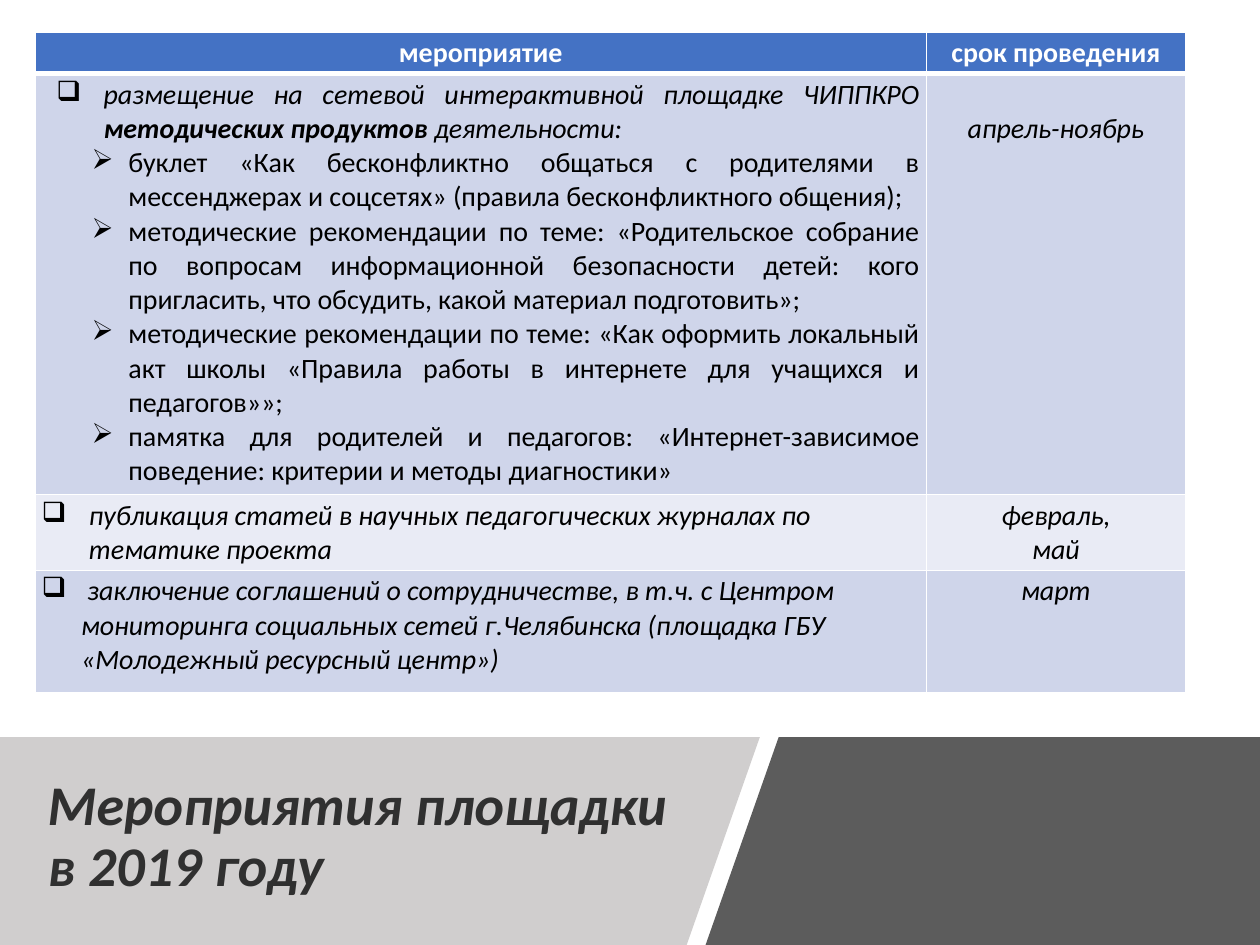
import pptx
import pptx.util
import pptx.dml.color
import pptx.enum.text
import pptx.oxml.ns
from lxml import etree

Pt = pptx.util.Pt
ALIGN = pptx.enum.text.PP_ALIGN
FONT = "Calibri"
COLORS = {
    "white": "FFFFFF", "black": "000000", "header": "4472C4",
    "band_dark": "CFD5EA", "band_light": "E9EBF5",
    "title": "303030", "title_panel": "D0CECE", "side_panel": "404040",
}


def rgb(name):
    return pptx.dml.color.RGBColor.from_string(COLORS[name])


def add_element(parent, tag, **attributes):
    return etree.SubElement(parent, pptx.oxml.ns.qn(tag), attributes)


def add_run(paragraph, text, size, color, bold=False, italic=False):
    run = paragraph.add_run()
    run.text = text
    font = run.font
    font.name, font.size, font.bold, font.italic = FONT, Pt(size), bold, italic
    font.color.rgb = rgb(color)


def set_bullet(paragraph, mark, left, hanging):
    properties = paragraph._p.get_or_add_pPr()
    properties.set("marL", str(Pt(left)))
    properties.set("indent", str(-Pt(hanging)))
    add_element(properties, "a:buChar", char=mark)


def set_borders(cell, bottom):
    properties = cell._tc.get_or_add_tcPr()
    for side, width in (("L", 1), ("R", 1), ("T", 1), ("B", bottom)):
        line = add_element(properties, f"a:ln{side}", w=str(Pt(width)))
        fill = add_element(line, "a:solidFill")
        add_element(fill, "a:srgbClr", val=COLORS["white"])


def fill_cell(cell, paragraphs, fill, color="black", top=2.2, bottom_line=1):
    """Each paragraph is (alignment, bullet or None, runs of (text, bold, italic))."""
    set_borders(cell, bottom_line)
    cell.fill.solid()
    cell.fill.fore_color.rgb = rgb(fill)
    cell.margin_left = cell.margin_right = Pt(3.6)
    cell.margin_top, cell.margin_bottom = Pt(top), Pt(2.2)
    frame = cell.text_frame
    for index, (alignment, bullet, runs) in enumerate(paragraphs):
        paragraph = frame.add_paragraph() if index else frame.paragraphs[0]
        paragraph.alignment = alignment
        if bullet:
            set_bullet(paragraph, *bullet)
        for text, bold, italic in runs:
            add_run(paragraph, text, 16, color, bold, italic)


def add_schedule(slide, left, top, width, height):
    date_width = 148.3
    row_heights = (22.2, 240.5, 43.3, height - 306)
    table = slide.shapes.add_table(4, 2, Pt(left), Pt(top), Pt(width), Pt(height)).table
    table.columns[0].width = Pt(width - date_width)
    table.columns[1].width = Pt(date_width)
    for row, row_height in zip(table.rows, row_heights):
        row.height = Pt(row_height)

    # Header
    for column, heading in enumerate(("мероприятие", "срок проведения")):
        fill_cell(table.cell(0, column), [(ALIGN.CENTER, None, [(heading, True, False)])],
                  "header", "white", bottom_line=3)

    # Activities
    products = (
        "буклет «Как бесконфликтно общаться с родителями в мессенджерах и соцсетях» "
        "(правила бесконфликтного общения);",
        "методические рекомендации по теме: «Родительское собрание по вопросам "
        "информационной безопасности детей: кого пригласить, что обсудить, "
        "какой материал подготовить»;",
        "методические рекомендации по теме: «Как оформить локальный акт школы "
        "«Правила работы в интернете для учащихся и педагогов»»;",
        "памятка для родителей и педагогов: «Интернет-зависимое поведение: "
        "критерии и методы диагностики»",
    )
    placement = [(ALIGN.JUSTIFY, ("❑", 35.4, 27), [
        ("размещение на сетевой интерактивной площадке ЧИППКРО ", False, True),
        ("методических продуктов ", True, True),
        ("деятельности:", False, True)])]
    placement += [(ALIGN.JUSTIFY, ("➢", 49.6, 21), [(product, False, False)])
                  for product in products]
    articles = [(ALIGN.LEFT, ("❑", 27, 27), [
        ("публикация статей в научных педагогических журналах по тематике проекта",
         False, True)])]
    agreements = [(ALIGN.LEFT, ("❑", 22.5, 22.5), [
        (" заключение соглашений о сотрудничестве, в т.ч. с Центром мониторинга "
         "социальных сетей г.Челябинска (площадка ГБУ «Молодежный ресурсный центр»)",
         False, True)])]

    # Body rows: activity, dates, band colour, top margin of the date
    body = (
        (placement, ("апрель-ноябрь",), "band_dark", 21.7),
        (articles, ("февраль,", "май"), "band_light", 2.2),
        (agreements, ("март",), "band_dark", 2.2),
    )
    for row, (activity, dates, band, date_top) in enumerate(body, start=1):
        fill_cell(table.cell(row, 0), activity, band)
        fill_cell(table.cell(row, 1),
                  [(ALIGN.CENTER, None, [(date, False, True)]) for date in dates],
                  band, top=date_top)


def add_panel(slide, corners, color, opacity=None):
    points = [(Pt(x), Pt(y)) for x, y in corners]
    builder = slide.shapes.build_freeform(*points[0], scale=1.0)
    builder.add_line_segments(points[1:], close=True)
    panel = builder.convert_to_shape()
    panel.shadow.inherit = False
    panel.fill.solid()
    panel.fill.fore_color.rgb = rgb(color)
    panel.line.fill.background()
    if opacity:
        swatch = panel._element.spPr.find(".//" + pptx.oxml.ns.qn("a:srgbClr"))
        add_element(swatch, "a:alpha", val=str(opacity * 1000))


def add_title_band(slide, left, top, width, height):
    right, bottom = left + width, top + height
    slant = 41.8
    side_left, title_right = left + 403.2, left + 434.2

    # Slanted panels
    add_panel(slide, [(side_left + slant, top), (right, top), (right, bottom),
                      (side_left, bottom)], "side_panel", opacity=85)
    add_panel(slide, [(left, top), (title_right, top), (title_right - slant, bottom),
                      (left, bottom)], "title_panel")

    # Title
    title = slide.shapes.add_textbox(Pt(left + 20.2), Pt(top + 14.4), Pt(372.2), Pt(86.4))
    frame = title.text_frame
    frame.word_wrap = True
    frame.vertical_anchor = pptx.enum.text.MSO_ANCHOR.MIDDLE
    paragraph = frame.paragraphs[0]
    paragraph.line_spacing = 0.9
    add_run(paragraph, "Мероприятия площадки в 2019 году", 32, "title", True, True)


def main():
    deck = pptx.Presentation()
    deck.slide_width, deck.slide_height = Pt(720), Pt(540)
    slide = deck.slides.add_slide(deck.slide_layouts[6])
    add_title_band(slide, 0, 421.2, 720, 118.8)
    add_schedule(slide, 20.2, 18.5, 657.4, 376.2)
    deck.save("out.pptx")


if __name__ == "__main__":
    main()
